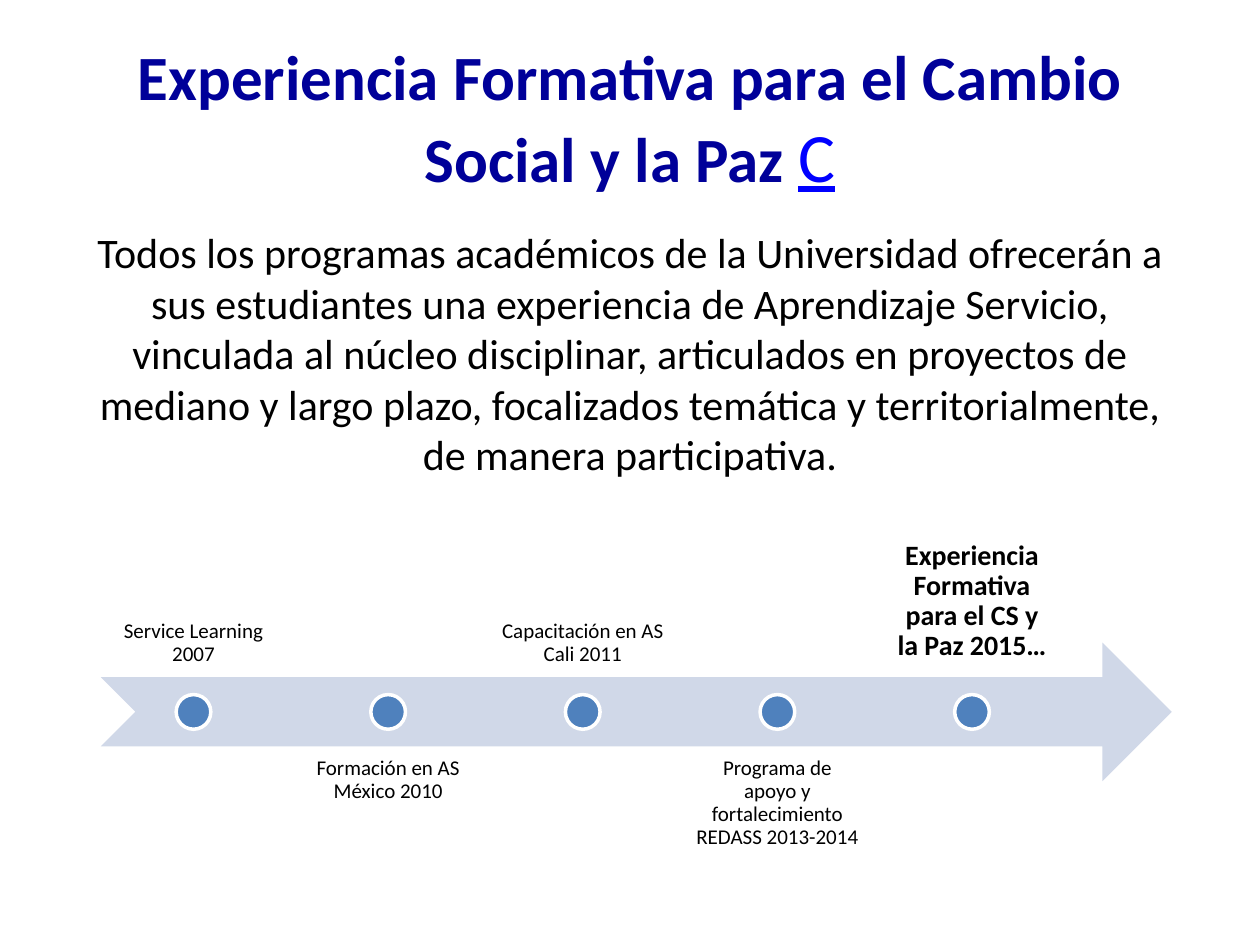
from dataclasses import dataclass

from lxml.etree import SubElement
from pptx import Presentation
from pptx.dml.color import RGBColor
from pptx.enum.shapes import MSO_SHAPE
from pptx.enum.text import MSO_ANCHOR, MSO_AUTO_SIZE, PP_ALIGN
from pptx.oxml.ns import qn
from pptx.util import Inches, Pt


@dataclass(frozen=True)
class Theme:
    font: str = "Calibri"
    navy: str = "000099"
    link: str = "0000FF"
    black: str = "000000"
    white: str = "FFFFFF"
    band: str = "D0D8E8"
    dot: str = "4F81BD"
    title_size: float = 36
    link_size: float = 39.6
    body_size: float = 24
    label_size: float = 12
    final_size: float = 16


@dataclass(frozen=True)
class Box:
    left: float
    top: float
    width: float
    height: float

    def share(self, x, y, width, height):
        """Return the box that takes these shares of this one."""
        return Box(self.left + x * self.width, self.top + y * self.height,
                   width * self.width, height * self.height)

    def lengths(self):
        return [Inches(v) for v in (self.left, self.top, self.width, self.height)]


THEME = Theme()
PAGE = Box(0, 0, 10, 7.5)

TITLE = "Experiencia Formativa para el Cambio Social y la Paz "
BODY = ("Todos los programas académicos de la Universidad ofrecerán a sus "
        "estudiantes una experiencia de Aprendizaje Servicio, vinculada al "
        "núcleo disciplinar, articulados en proyectos de mediano y largo plazo, "
        "focalizados temática y territorialmente, de manera participativa.")
MILESTONES = [
    "Service Learning 2007",
    "Formación en AS México 2010",
    "Capacitación en AS Cali 2011",
    "Programa de apoyo y fortalecimiento REDASS 2013-2014",
    "Experiencia Formativa para el CS y la Paz 2015…",
]


def style_font(font, size, color, bold=False):
    font.name, font.size, font.bold = THEME.font, Pt(size), bold
    font.color.rgb = RGBColor.from_string(color)


def place(shape, box):
    shape.left, shape.top, shape.width, shape.height = box.lengths()


def add_title(page, box):
    title = page.shapes.title
    place(title, box)
    frame = title.text_frame
    frame.auto_size = MSO_AUTO_SIZE.NONE
    frame.vertical_anchor = MSO_ANCHOR.MIDDLE
    para = frame.paragraphs[0]
    para.alignment = PP_ALIGN.CENTER
    span = para.add_run()
    span.text = TITLE
    style_font(span.font, THEME.title_size, THEME.navy, bold=True)
    # Underlined closing letter
    span = para.add_run()
    span.text = "C"
    style_font(span.font, THEME.link_size, THEME.link)
    span.font.underline = True


def add_body(page, box):
    body = page.placeholders[1]
    place(body, box)
    frame = body.text_frame
    frame.auto_size = MSO_AUTO_SIZE.NONE
    frame.text = BODY
    para = frame.paragraphs[0]
    para.alignment = PP_ALIGN.CENTER
    style_font(para.font, THEME.body_size, THEME.black)
    # Plain paragraph: no bullet and no indent
    settings = para._p.get_or_add_pPr()
    settings.set("marL", "0")
    settings.set("indent", "0")
    bullet = SubElement(settings, qn("a:buNone"))
    settings.insert_element_before(bullet, "a:tabLst", "a:defRPr", "a:extLst")


def add_filled(group, kind, box, fill, outline=None):
    shape = group.shapes.add_shape(kind, *box.lengths())
    shape.shadow.inherit = False
    shape.fill.solid()
    shape.fill.fore_color.rgb = RGBColor.from_string(fill)
    if outline:
        shape.line.color.rgb = RGBColor.from_string(outline)
        shape.line.width = Pt(2)
    else:
        shape.line.fill.background()


def add_label(group, box, text, anchor, size, bold):
    frame = group.shapes.add_textbox(*box.lengths()).text_frame
    frame.word_wrap = True
    frame.vertical_anchor = anchor
    inset = Inches(0.12 if bold else 0.09)
    frame.margin_left = frame.margin_right = inset
    frame.margin_top = frame.margin_bottom = inset
    frame.text = text
    para = frame.paragraphs[0]
    para.alignment = PP_ALIGN.CENTER
    para.line_spacing = 0.9
    para.space_after = Pt(0.35 * size)
    style_font(para.font, size, THEME.black, bold)


def add_timeline(page, box):
    group = page.shapes.add_group_shape()
    add_filled(group, MSO_SHAPE.NOTCHED_RIGHT_ARROW,
               box.share(0, 0.3, 1, 0.4), THEME.band)

    # Columns fill 90% of the width, with gaps of 5% of a column
    count = len(MILESTONES)
    column = 0.9 / (count + 0.05 * (count - 1))
    dot_height = 0.1
    dot_width = dot_height * box.height / box.width

    for index, text in enumerate(MILESTONES):
        left = index * column * 1.05
        above = index % 2 == 0
        final = index == count - 1
        add_label(group, box.share(left, 0 if above else 0.6, column, 0.4), text,
                  MSO_ANCHOR.BOTTOM if above else MSO_ANCHOR.TOP,
                  THEME.final_size if final else THEME.label_size, final)
        dot = box.share(left + (column - dot_width) / 2, 0.45, dot_width, dot_height)
        add_filled(group, MSO_SHAPE.OVAL, dot, THEME.dot, THEME.white)


def main():
    deck = Presentation()
    deck.slide_width, deck.slide_height = Inches(PAGE.width), Inches(PAGE.height)
    page = deck.slides.add_slide(deck.slide_layouts[1])
    add_title(page, PAGE.share(0.05, 0.04, 0.9, 1 / 6))
    add_body(page, PAGE.share(0.05, 7 / 30, 0.9, 0.66))
    add_timeline(page, PAGE.share(0.08, 0.57, 0.85, 11 / 30))
    deck.save("out.pptx")


if __name__ == "__main__":
    main()
